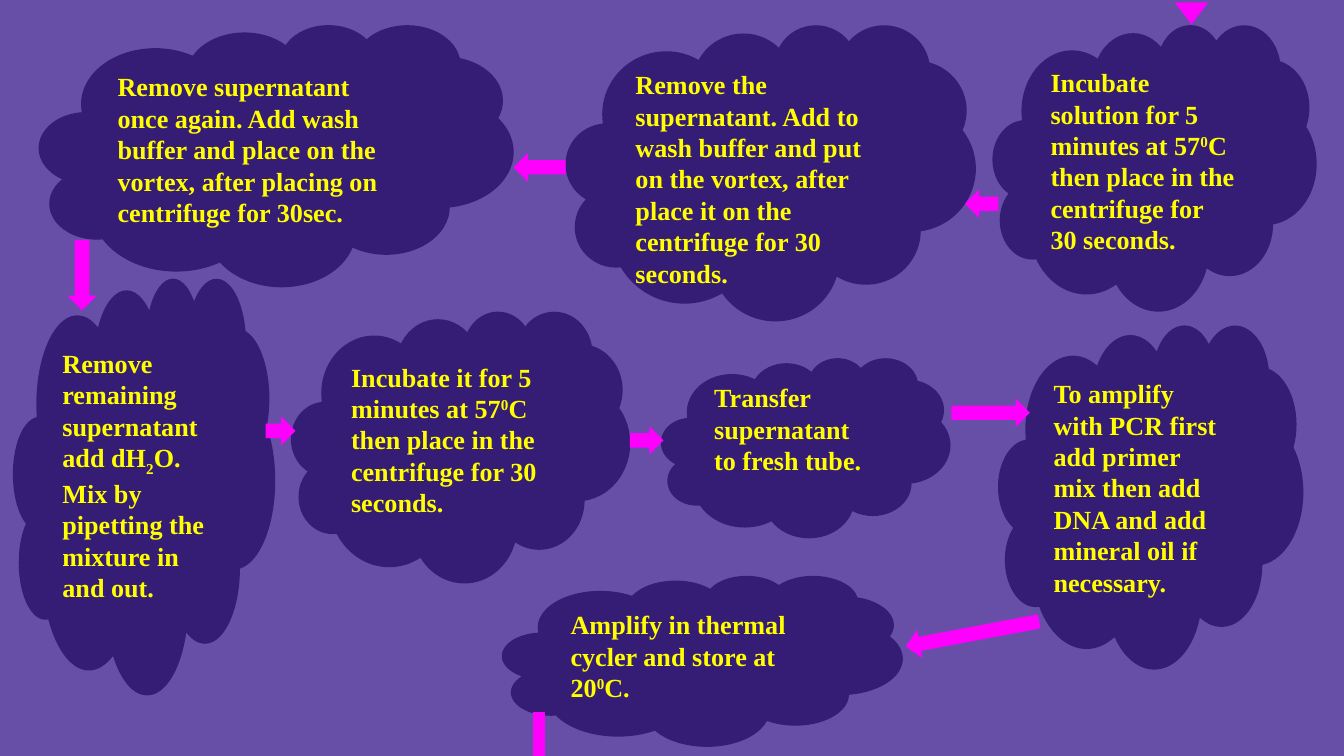
from dataclasses import dataclass

from pptx import Presentation
from pptx.dml.color import RGBColor
from pptx.enum.shapes import MSO_SHAPE
from pptx.enum.text import MSO_ANCHOR, PP_ALIGN
from pptx.util import Pt

CLOUD = MSO_SHAPE.CLOUD
LEFT, RIGHT, DOWN = MSO_SHAPE.LEFT_ARROW, MSO_SHAPE.RIGHT_ARROW, MSO_SHAPE.DOWN_ARROW
MINUS = MSO_SHAPE.MATH_MINUS
MIDDLE = MSO_ANCHOR.MIDDLE
ALIGN_LEFT = PP_ALIGN.LEFT

COLORS = {
    "background": "674EA7",
    "cloud": "351C75",
    "text": "FFFF00",
    "arrow": "FF00FF",
}
FONT = "Times New Roman"
FONT_SIZE = 14
INSET = 7.2
THICK = 15.3
SUPER, SUB = "30000", "-25000"


@dataclass
class Step:
    x: float
    y: float
    w: float
    h: float
    texts: tuple
    baseline: str = SUPER
    shift: float = -0.5


@dataclass
class Arrow:
    kind: int
    x: float
    y: float
    w: float
    h: float = THICK
    rotation: float = 0
    adjustments: tuple = (0.5, 0.5)


INCUBATE_END = "C then place in the centrifuge for 30 seconds."

STEPS = [
    Step(303.1, 13, 219.6, 158.6,
         ("Remove the supernatant. Add to wash buffer and put on the vortex, "
          "after place it on the centrifuge for 30 seconds.",), shift=7),
    Step(20.9, 13, 254.2, 140.4,
         ("Remove supernatant once again. Add wash buffer and place on the vortex, "
          "after placing on centrifuge for 30sec.",), shift=0),
    Step(7, 148.6, 140.4, 223.2,
         ("Remove remaining supernatant add dH", "2",
          "O. Mix by pipetting the mixture in and out."), SUB),
    Step(534.8, 173.8, 163.4, 184.3,
         ("To amplify with PCR first add primer mix then add DNA "
          "and add mineral oil if necessary.",)),
    Step(156, 166.5, 181.6, 145.6,
         ("Incubate it for 5 minutes at 57", "0", INCUBATE_END)),
    Step(354.2, 191.6, 155, 96.5,
         ("Transfer supernatant to fresh tube.",), shift=-8),
    Step(269, 308.2, 214.6, 91.6,
         ("Amplify in thermal cycler and store at 20", "0", "C.")),
    Step(531.8, 13, 173.5, 153.4,
         ("Incubate solution for 5 minutes at 57", "0", INCUBATE_END), shift=0),
]

ARROWS = [
    Arrow(DOWN, 36, 128.5, 15.8, 37.8),
    Arrow(LEFT, 275.1, 82, 28),
    Arrow(LEFT, 516.9, 101.5, 18),
    Arrow(RIGHT, 142.3, 223.2, 16),
    Arrow(RIGHT, 337.5, 228.3, 18),
    Arrow(RIGHT, 509.7, 213.5, 42),
    Arrow(LEFT, 484.6, 332, 72.8, rotation=349.3),
    Arrow(DOWN, 629.3, -19.4, 18, 32.4, adjustments=(0, 0.65)),
    Arrow(MINUS, 271.6, 380.9, 34.6, 26.6, 90, (0.24,)),
]


def add_plain_shape(s, kind: int, item, color: str):
    sp = s.shapes.add_shape(kind, Pt(item.x), Pt(item.y), Pt(item.w), Pt(item.h))
    sp.shadow.inherit = False
    sp.fill.solid()
    sp.fill.fore_color.rgb = RGBColor.from_string(COLORS[color])
    sp.line.fill.background()
    return sp


def draw_step(s, step: Step) -> None:
    sp = add_plain_shape(s, CLOUD, step, "cloud")
    tf = sp.text_frame
    tf.word_wrap = True
    tf.vertical_anchor = MIDDLE
    tf.margin_left = tf.margin_right = Pt(INSET)
    tf.margin_top = Pt(INSET + max(0, 2 * step.shift))
    tf.margin_bottom = Pt(INSET + max(0, -2 * step.shift))
    p = tf.paragraphs[0]
    p.alignment = ALIGN_LEFT
    for i, text in enumerate(step.texts):
        r = p.add_run()
        r.text = text
        r.font.name = FONT
        r.font.size = Pt(FONT_SIZE)
        r.font.bold = True
        r.font.color.rgb = RGBColor.from_string(COLORS["text"])
        if i % 2:
            r._r.get_or_add_rPr().set("baseline", step.baseline)


def draw_arrow(s, arrow: Arrow) -> None:
    sp = add_plain_shape(s, arrow.kind, arrow, "arrow")
    sp.rotation = arrow.rotation
    for i, value in enumerate(arrow.adjustments):
        sp.adjustments[i] = value


def main() -> None:
    prs = Presentation()
    prs.slide_width, prs.slide_height = Pt(720), Pt(405)
    s = prs.slides.add_slide(prs.slide_layouts[6])
    s.background.fill.solid()
    s.background.fill.fore_color.rgb = RGBColor.from_string(COLORS["background"])
    for step in STEPS:
        draw_step(s, step)
    for arrow in ARROWS:
        draw_arrow(s, arrow)
    prs.save("out.pptx")


if __name__ == "__main__":
    main()
